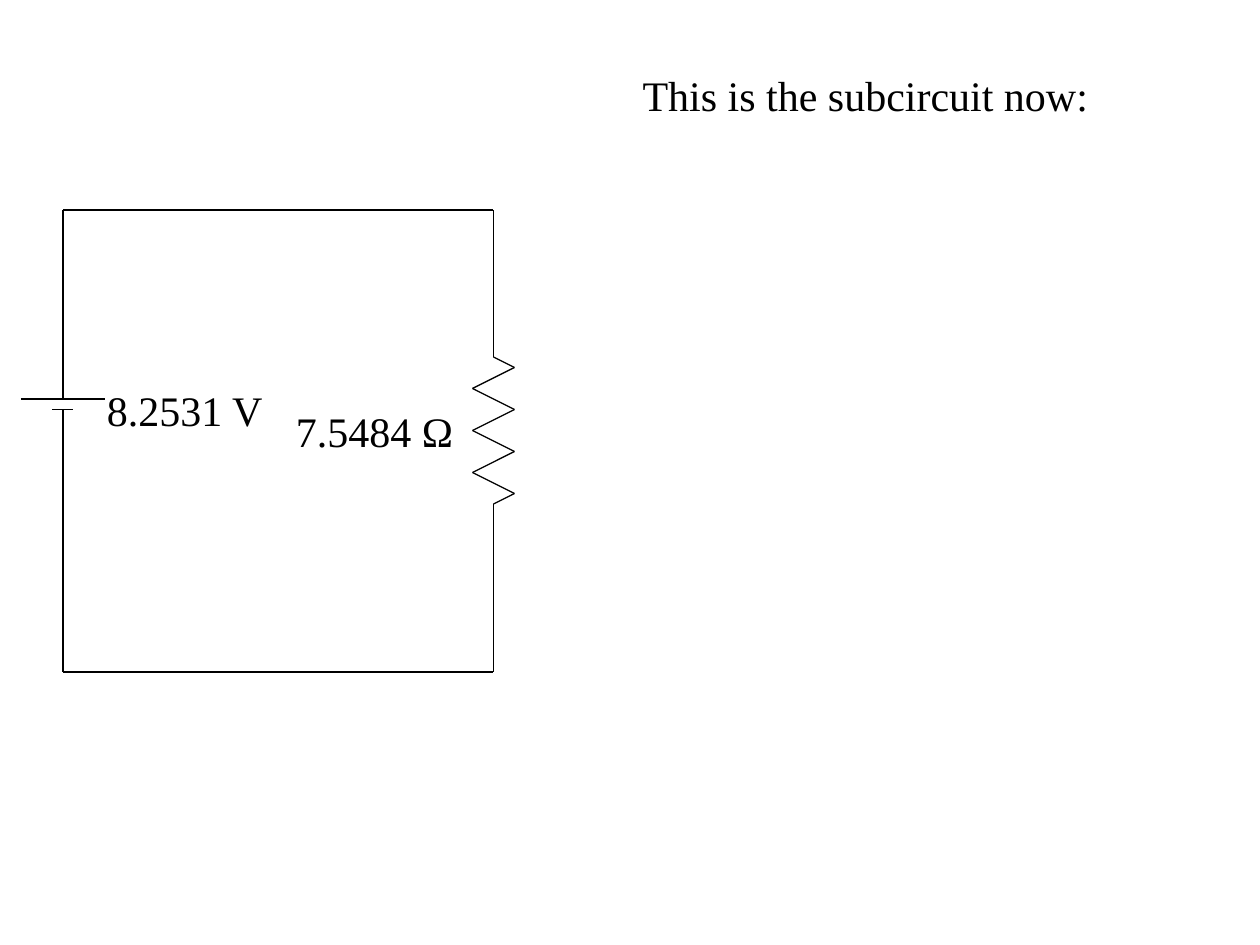
from itertools import pairwise

from lxml import etree
from pptx import Presentation
from pptx.dml.color import RGBColor
from pptx.enum.shapes import MSO_CONNECTOR
from pptx.enum.text import MSO_ANCHOR, MSO_AUTO_SIZE, PP_ALIGN
from pptx.oxml.ns import qn
from pptx.util import Pt

STRAIGHT = MSO_CONNECTOR.STRAIGHT
TOP = MSO_ANCHOR.TOP
FIT_SHAPE = MSO_AUTO_SIZE.SHAPE_TO_FIT_TEXT
LEFT = PP_ALIGN.LEFT
TITLE_ONLY = 5


def color(value):
    return RGBColor.from_string(value)


class CircuitSlide:
    ink = "000000"
    wire_width = 0.75
    font_format = {"name": "Times New Roman", "size": Pt(24), "bold": False}

    def __init__(self, presentation):
        self.slide = presentation.slides.add_slide(presentation.slide_layouts[TITLE_ONLY])

    def set_text(self, holder, text, wrap):
        frame = holder.text_frame
        frame_format = {"word_wrap": wrap, "auto_size": FIT_SHAPE, "vertical_anchor": TOP}
        for name, value in frame_format.items():
            setattr(frame, name, value)
        paragraph = frame.paragraphs[0]
        paragraph.text = text
        paragraph.alignment = LEFT
        font = paragraph.runs[0].font
        for name, value in self.font_format.items():
            setattr(font, name, value)
        font.color.rgb = color(self.ink)

    def title(self, text, left, top, width, height):
        heading = self.slide.shapes.title
        place = {"left": left, "top": top, "width": width, "height": height}
        for name, value in place.items():
            setattr(heading, name, Pt(value))
        self.set_text(heading, text, True)

    def label(self, text, left, top, width, height):
        box = self.slide.shapes.add_textbox(Pt(left), Pt(top), Pt(width), Pt(height))
        self.set_text(box, text, False)

    def wire(self, start, end):
        ends = [Pt(value) for value in (*start, *end)]
        connector = self.slide.shapes.add_connector(STRAIGHT, *ends)
        connector.line.width = Pt(self.wire_width)
        connector.line.color.rgb = color(self.ink)
        etree.SubElement(connector._element.spPr, qn("a:effectLst"))

    def wires(self, points):
        for start, end in pairwise(points):
            self.wire(start, end)

    def battery(self, x, top, long_plate, short_plate, bottom):
        self.wire((x, top), (x, long_plate))
        for y, reach in ((long_plate, 24), (short_plate, 6)):
            self.wire((x - reach, y), (x + reach, y))
        self.wire((x, short_plate), (x, bottom))

    def resistor(self, x, top, lead, peaks):
        reach, step = 12, 12
        first = top + lead + step / 2
        zigzag = [(x + reach * (-1) ** i, first + step * i) for i in range(peaks)]
        end = zigzag[-1][1] + step / 2
        bottom = end + lead
        self.wires([(x, top), (x, top + lead), *zigzag, (x, end), (x, bottom)])
        return bottom


def main():
    presentation = Presentation()
    presentation.slide_width = Pt(720)
    presentation.slide_height = Pt(540)
    circuit = CircuitSlide(presentation)

    source_x, load_x = 36, 282
    loop_top, loop_bottom = 120, 384
    source_top, source_bottom = 198, 264
    load_top = 192

    circuit.battery(source_x, source_top, 228, 234, source_bottom)
    load_bottom = circuit.resistor(load_x, load_top, lead=12, peaks=7)
    circuit.wires([
        (source_x, source_top), (source_x, loop_top),
        (load_x, loop_top), (load_x, load_top),
    ])
    circuit.wires([
        (source_x, source_bottom), (source_x, loop_bottom),
        (load_x, loop_bottom), (load_x, load_bottom),
    ])

    circuit.label("8.2531 V", 54, 216, 104, 36)
    circuit.label("7.5484 Ω", 162, 228, 104, 36)
    circuit.title("This is the subcircuit now:", 360, 36, 336, 36)

    presentation.save("out.pptx")


if __name__ == "__main__":
    main()
